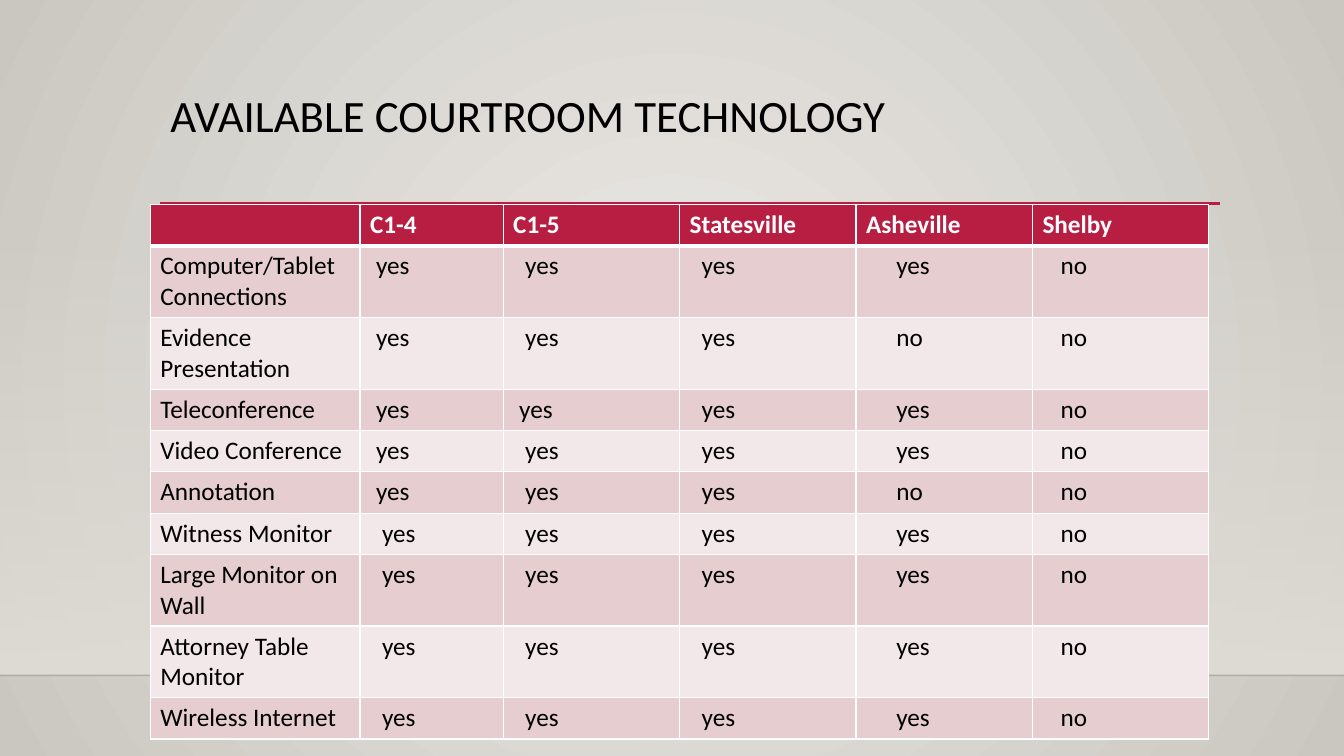
from lxml.etree import SubElement
from pptx import Presentation
from pptx.dml.color import RGBColor
from pptx.enum.shapes import MSO_CONNECTOR, MSO_SHAPE
from pptx.enum.text import MSO_ANCHOR, PP_ALIGN
from pptx.oxml import parse_xml
from pptx.oxml.ns import nsdecls, qn
from pptx.util import Inches, Pt

CRIMSON, WHITE, BLACK, SAND = "B71E42", "FFFFFF", "000000", "DFDBD5"
BAND_COLORS = ("E6CDCF", "F3E8E9")
RADIAL = ('<a:path path="circle">'
          '<a:fillToRect l="50000" t="50000" r="50000" b="50000"/></a:path>')
DOWNWARD = '<a:lin ang="5400000" scaled="0"/>'

COURTROOMS = ["C1-4", "C1-5", "Statesville", "Asheville", "Shelby"]
COLUMN_WIDTHS = [2.08, 1.42, 1.75, 1.75, 1.75, 1.75]
ROW_HEIGHT = 0.41
CELL_MARGIN, INDENT_STEP = 0.1, 0.06
# Technology, answer per courtroom, indent steps per courtroom
TECHNOLOGY = [
    ("Computer/Tablet Connections", "yes yes yes yes no", (1, 2, 2, 5, 3)),
    ("Evidence Presentation", "yes yes yes no no", (1, 2, 2, 5, 3)),
    ("Teleconference", "yes yes yes yes no", (1, 1, 2, 5, 3)),
    ("Video Conference", "yes yes yes yes no", (1, 2, 2, 5, 3)),
    ("Annotation", "yes yes yes no no", (1, 2, 2, 5, 3)),
    ("Witness Monitor", "yes yes yes yes no", (2, 2, 2, 5, 3)),
    ("Large Monitor on Wall", "yes yes yes yes no", (2, 2, 2, 5, 3)),
    ("Attorney Table Monitor", "yes yes yes yes no", (2, 2, 2, 5, 3)),
    ("Wireless Internet", "yes yes yes yes no", (2, 2, 2, 5, 3)),
]


def rgb(color):
    return RGBColor.from_string(color)


def write(frame, text, size=18, color=BLACK, bold=False, line_spacing=None):
    frame.word_wrap = True
    paragraph = frame.paragraphs[0]
    paragraph.alignment = PP_ALIGN.LEFT
    paragraph.line_spacing = line_spacing
    if text:
        run = paragraph.add_run()
        run.text = text
        run.font.name = "Calibri"
        run.font.size = Pt(size)
        run.font.bold = bold
        run.font.color.rgb = rgb(color)


def set_gradient(properties, stops, direction):
    """Swap the solid fill for a gradient; stops are (position, colour, opacity) in percent."""
    stop_xml = "".join(
        f'<a:gs pos="{position * 1000}"><a:srgbClr val="{color}">'
        f'<a:alpha val="{opacity * 1000}"/></a:srgbClr></a:gs>'
        for position, color, opacity in stops)
    gradient = parse_xml(f'<a:gradFill {nsdecls("a")} rotWithShape="1">'
                         f'<a:gsLst>{stop_xml}</a:gsLst>{direction}</a:gradFill>')
    solid = properties.find(qn("a:solidFill"))
    properties.replace(solid, gradient)


def add_backdrop(slide):
    slide.background.fill.solid()
    set_gradient(slide.element.find(".//" + qn("p:bgPr")),
                 [(0, "ECEAE7", 100), (100, "CAC7C1", 100)], RADIAL)
    wall = slide.shapes.add_shape(MSO_SHAPE.RECTANGLE, Inches(0), Inches(2.21),
                                  Inches(13.33), Inches(4.49))
    wall.shadow.inherit = False
    wall.line.fill.background()
    wall.fill.solid()
    set_gradient(wall.element.spPr, [(0, SAND, 0), (100, SAND, 100)], DOWNWARD)


def add_rule(slide, left, right, y, color, width, opacity=100):
    rule = slide.shapes.add_connector(MSO_CONNECTOR.STRAIGHT, Inches(left), Inches(y),
                                      Inches(right), Inches(y))
    rule.line.color.rgb = rgb(color)
    rule.line.width = Pt(width)
    if opacity < 100:
        tint = rule.line._ln.find(".//" + qn("a:srgbClr"))
        SubElement(tint, qn("a:alpha"), val=str(opacity * 1000))
    SubElement(rule.element.spPr, qn("a:effectLst"))


def place_title(slide, text):
    title = slide.shapes.title
    title.left, title.top = Inches(1.59), Inches(0.88)
    title.width, title.height = Inches(10.5), Inches(1.15)
    title.text_frame.vertical_anchor = MSO_ANCHOR.TOP
    write(title.text_frame, text, size=32, line_spacing=0.9)
    slide.shapes._spTree.append(title.element)


def set_borders(cell, top=1, bottom=1):
    properties = cell._tc.get_or_add_tcPr()
    for side, width in (("L", 1), ("R", 1), ("T", top), ("B", bottom)):
        border = SubElement(properties, qn(f"a:ln{side}"), w=str(Pt(width)))
        fill = SubElement(border, qn("a:solidFill"))
        SubElement(fill, qn("a:srgbClr"), val=WHITE)


def fill_cell(cell, text, fill, indent=0, top=1, bottom=1, **text_format):
    set_borders(cell, top, bottom)
    cell.fill.solid()
    cell.fill.fore_color.rgb = rgb(fill)
    cell.margin_left = Inches(CELL_MARGIN + indent * INDENT_STEP)
    write(cell.text_frame, text, **text_format)


def add_technology_table(slide):
    height = Inches(5.23)
    frame = slide.shapes.add_table(len(TECHNOLOGY) + 1, len(COLUMN_WIDTHS), Inches(1.49),
                                   Inches(2.03), Inches(sum(COLUMN_WIDTHS)), height)
    table = frame.table
    for column, width in zip(table.columns, COLUMN_WIDTHS):
        column.width = Inches(width)
    for row in table.rows:
        row.height = Inches(ROW_HEIGHT)
    frame.height = height

    for col, courtroom in enumerate([""] + COURTROOMS):
        fill_cell(table.cell(0, col), courtroom, CRIMSON, bottom=3, color=WHITE, bold=True)
    for row, (technology, answers, indents) in enumerate(TECHNOLOGY, start=1):
        entries = zip([technology] + answers.split(), (0,) + indents)
        for col, (entry, indent) in enumerate(entries):
            fill_cell(table.cell(row, col), entry, BAND_COLORS[(row - 1) % 2],
                      indent=indent, top=3 if row == 1 else 1)


def main():
    deck = Presentation()
    deck.slide_width, deck.slide_height = Inches(13.33), Inches(7.5)
    slide = deck.slides.add_slide(deck.slide_layouts[5])
    add_backdrop(slide)
    add_rule(slide, 0, 13.33, 6.7, "000001", 1, opacity=20)
    add_rule(slide, 1.59, 12.1, 2.02, CRIMSON, 2.5)
    place_title(slide, "AVAILABLE COURTROOM TECHNOLOGY")
    add_technology_table(slide)
    deck.save("out.pptx")


if __name__ == "__main__":
    main()
